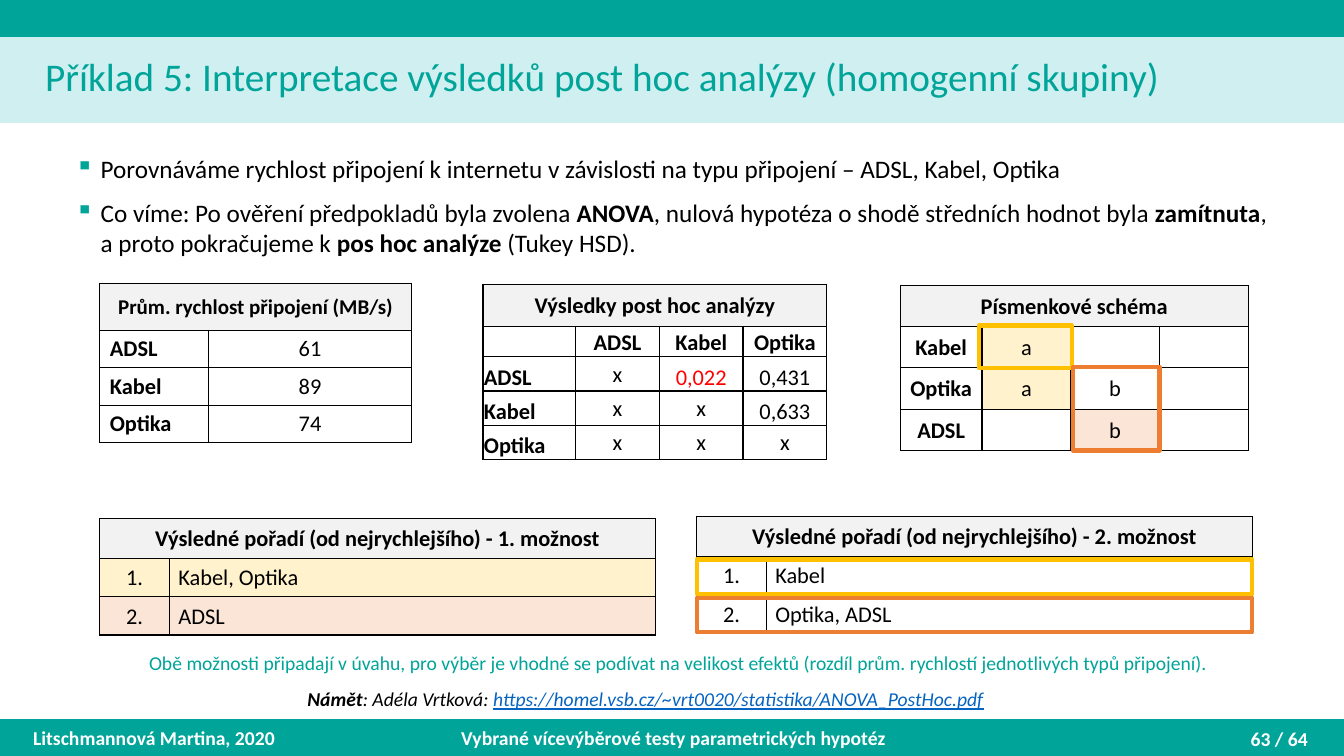
from dataclasses import dataclass

from lxml import etree
from pptx import Presentation
from pptx.dml.color import RGBColor
from pptx.enum.shapes import MSO_SHAPE
from pptx.enum.text import MSO_ANCHOR, PP_ALIGN
from pptx.oxml.ns import qn
from pptx.util import Inches, Pt

RECTANGLE = MSO_SHAPE.RECTANGLE
TOP, MIDDLE, BOTTOM = MSO_ANCHOR.TOP, MSO_ANCHOR.MIDDLE, MSO_ANCHOR.BOTTOM
LEFT, CENTER, RIGHT = PP_ALIGN.LEFT, PP_ALIGN.CENTER, PP_ALIGN.RIGHT

TEAL = RGBColor(0x00, 0xA4, 0x99)
PALE_TEAL = RGBColor(0xD0, 0xEF, 0xF0)
WHITE = RGBColor(0xFF, 0xFF, 0xFF)
BLACK = RGBColor(0x00, 0x00, 0x00)
RED = RGBColor(0xFF, 0x00, 0x00)
GREY = RGBColor(0xF2, 0xF2, 0xF2)
CREAM = RGBColor(0xFF, 0xF2, 0xCC)
PEACH = RGBColor(0xFB, 0xE5, 0xD6)
GOLD = RGBColor(0xFF, 0xC0, 0x00)
ORANGE = RGBColor(0xED, 0x7D, 0x31)
LINK_BLUE = RGBColor(0x05, 0x63, 0xC1)

TIGHT = (0.01, 0.01, 0.01, 0)
ROOMY = (0.1, 0.05, 0.1, 0.05)


@dataclass
class Run:
    text: str
    bold: bool = False
    italic: bool = False
    underline: bool = False
    color: RGBColor = None


@dataclass
class Cell:
    text: str = ""
    bold: bool = False
    align: PP_ALIGN = CENTER
    anchor: MSO_ANCHOR = MIDDLE
    fill: RGBColor = None
    color: RGBColor = BLACK
    indent: float = 0
    size: float = 16


class SlideBuilder:
    font_name = "Calibri"

    def __init__(self, slide):
        self.shapes = slide.shapes

    def rectangle(self, left, top, width, height, line, weight, fill=None):
        box = self.shapes.add_shape(RECTANGLE, Inches(left), Inches(top), Inches(width), Inches(height))
        box.shadow.inherit = False
        if fill is None:
            box.fill.background()
        else:
            box.fill.solid()
            box.fill.fore_color.rgb = fill
        box.line.color.rgb = line
        box.line.width = Pt(weight)

    def append_run(self, paragraph, run, size, color):
        piece = paragraph.add_run()
        piece.text = run.text
        font = piece.font
        font.name, font.size = self.font_name, Pt(size)
        font.bold, font.italic, font.underline = run.bold, run.italic, run.underline
        font.color.rgb = run.color or color

    def text(self, left, top, width, height, runs, size, color, align=LEFT, anchor=TOP,
             wrap=True, line_spacing=None):
        frame = self.shapes.add_textbox(Inches(left), Inches(top), Inches(width), Inches(height)).text_frame
        frame.word_wrap = wrap
        frame.vertical_anchor = anchor
        paragraph = frame.paragraphs[0]
        paragraph.alignment = align
        if line_spacing:
            paragraph.line_spacing = line_spacing
        for run in runs:
            self.append_run(paragraph, run, size, color)

    def bullets(self, left, top, width, height, items, size):
        frame = self.shapes.add_textbox(Inches(left), Inches(top), Inches(width), Inches(height)).text_frame
        frame.word_wrap = True
        for number, lines in enumerate(items):
            paragraph = frame.add_paragraph() if number else frame.paragraphs[0]
            properties = paragraph._p.get_or_add_pPr()
            properties.set("marL", str(Inches(0.25)))
            properties.set("indent", str(-Inches(0.25)))
            bullet_color = etree.SubElement(properties, qn("a:buClr"))
            etree.SubElement(bullet_color, qn("a:srgbClr"), val=str(TEAL))
            etree.SubElement(properties, qn("a:buChar"), char="▪")
            if number:
                paragraph.space_before = Pt(10)
            for line_number, line in enumerate(lines):
                if line_number:
                    paragraph.add_line_break()
                for run in line:
                    self.append_run(paragraph, run, size, BLACK)

    def border(self, cell):
        properties = cell._tc.get_or_add_tcPr()
        for position, side in enumerate(("lnL", "lnR", "lnT", "lnB")):
            line = etree.Element(qn(f"a:{side}"), w=str(Pt(1)))
            fill = etree.SubElement(line, qn("a:solidFill"))
            etree.SubElement(fill, qn("a:srgbClr"), val=str(BLACK))
            properties.insert(position, line)

    def fill_cell(self, target, cell, margins):
        if cell.fill is None:
            target.fill.background()
        else:
            target.fill.solid()
            target.fill.fore_color.rgb = cell.fill
        self.border(target)
        target.margin_left, target.margin_top, target.margin_right, target.margin_bottom = map(Inches, margins)
        target.vertical_anchor = cell.anchor
        paragraph = target.text_frame.paragraphs[0]
        paragraph.alignment = cell.align
        if cell.indent:
            paragraph._p.get_or_add_pPr().set("marL", str(Inches(cell.indent)))
        if cell.text:
            self.append_run(paragraph, Run(cell.text, cell.bold), cell.size, cell.color)
        else:
            etree.SubElement(paragraph._p, qn("a:endParaRPr"), sz=str(cell.size * 100))

    def table(self, left, top, widths, heights, heading, rows, margins=TIGHT, heading_size=16):
        table = self.shapes.add_table(len(heights), len(widths), Inches(left), Inches(top),
                                      Inches(sum(widths)), Inches(sum(heights))).table
        table.first_row = table.horz_banding = False
        for column, width in zip(table.columns, widths):
            column.width = Inches(width)
        for row, height in zip(table.rows, heights):
            row.height = Inches(height)
        head = [Cell(heading, True, fill=GREY, size=heading_size)]
        head += [Cell(fill=GREY) for _ in widths[1:]]
        for row_number, row in enumerate([head] + rows):
            for column_number, cell in enumerate(row):
                self.fill_cell(table.cell(row_number, column_number), cell, margins)
        table.cell(0, 0).merge(table.cell(0, len(widths) - 1))


def ranking_rows(names, fills):
    return [[Cell(f"{place}.", fill=fill), Cell(name, align=LEFT, indent=0.08, fill=fill)]
            for place, (name, fill) in enumerate(zip(names, fills), 1)]


def main():
    presentation = Presentation()
    presentation.slide_width, presentation.slide_height = Inches(13.33), Inches(7.5)
    page = SlideBuilder(presentation.slides.add_slide(presentation.slide_layouts[6]))

    page.rectangle(0, 7.14, 13.33, 0.36, TEAL, 1, TEAL)
    page.rectangle(0, 0.36, 13.33, 0.86, PALE_TEAL, 0.75, PALE_TEAL)
    page.rectangle(0, 0, 13.33, 0.36, TEAL, 1, TEAL)
    page.text(0.35, 0.4, 11.88, 0.81,
              [Run("Příklad 5: Interpretace výsledků post hoc analýzy (homogenní skupiny)")],
              28, TEAL, anchor=MIDDLE, line_spacing=0.7)
    for left, top, width, label, align in (
            (0.23, 7.14, 3, "Litschmannová Martina, 2020", LEFT),
            (4.43, 7.14, 4.5, "Vybrané vícevýběrové testy parametrických hypotéz", CENTER),
            (10.07, 7.15, 3, "63 / 64", RIGHT)):
        page.text(left, top, width, 0.36, [Run(label, True)], 14, WHITE, align, MIDDLE)

    page.bullets(0.65, 1.47, 12.29, 1.2, [
        [[Run("Porovnáváme rychlost připojení k internetu v závislosti na typu připojení – ADSL, Kabel, Optika")]],
        [[Run("Co víme: Po ověření předpokladů byla zvolena "), Run("ANOVA", True),
          Run(", nulová hypotéza o shodě středních hodnot byla "), Run("zamítnuta", True), Run(",")],
         [Run("a proto pokračujeme k "), Run("pos hoc analýze ", True), Run("(Tukey HSD).")]],
    ], 18)

    speeds = (("ADSL", "61"), ("Kabel", "89"), ("Optika", "74"))
    page.table(0.99, 2.81, [1.08, 2.01], [0.47] + [0.37] * 3, "Prům. rychlost připojení (MB/s)",
               [[Cell(name, True, LEFT, TOP, WHITE), Cell(speed, anchor=TOP, fill=WHITE)]
                for name, speed in speeds], ROOMY, 15)

    p_values = (("ADSL", "x", "0,022", "0,431"), ("Kabel", "x", "x", "0,633"), ("Optika", "x", "x", "x"))
    post_hoc = [[Cell()] + [Cell(name, True, anchor=BOTTOM) for name, *_ in p_values]]
    for name, *values in p_values:
        post_hoc.append([Cell(name, True, LEFT, BOTTOM)] + [
            Cell(value, anchor=MIDDLE if value == "x" else BOTTOM, color=RED if value == "0,022" else BLACK)
            for value in values])
    page.table(4.79, 2.82, [0.92] + [0.83] * 3, [0.42, 0.3] + [0.34] * 3, "Výsledky post hoc analýzy", post_hoc)

    letter_rows = [
        [Cell("Kabel", True), Cell("a", fill=CREAM), Cell(), Cell()],
        [Cell("Optika", True), Cell("a", fill=CREAM), Cell("b"), Cell()],
        [Cell("ADSL", True), Cell(), Cell("b", fill=PEACH), Cell()],
    ]
    page.table(8.93, 2.83, [0.81] + [0.88] * 3, [0.41] * 4, "Písmenkové schéma", letter_rows)

    for option, left, top, names, fills in (
            (1, 0.99, 5.14, ("Kabel, Optika", "ADSL"), (CREAM, PEACH)),
            (2, 6.91, 5.12, ("Kabel", "Optika, ADSL"), (None, None))):
        page.table(left, top, [0.69, 4.82], [0.4, 0.38, 0.38],
                   f"Výsledné pořadí (od nejrychlejšího) - {option}. možnost", ranking_rows(names, fills))

    for left, top, width, height, color in (
            (9.71, 3.23, 0.92, 0.42, GOLD), (10.64, 3.64, 0.86, 0.83, ORANGE),
            (6.91, 5.93, 5.51, 0.34, ORANGE), (6.91, 5.55, 5.51, 0.34, GOLD)):
        page.rectangle(left, top, width, height, color, 3)

    page.text(1.38, 6.41, 11, 0.34, [
        Run("Obě možnosti připadají v úvahu, pro výběr je vhodné se podívat na velikost efektů "
            "(rozdíl prům. rychlostí jednotlivých typů připojení).")], 14, TEAL, wrap=False)
    page.text(2.95, 6.77, 6.92, 0.34, [
        Run("Námět", True, True), Run(": Adéla Vrtková: ", italic=True),
        Run("https://homel.vsb.cz/~vrt0020/statistika/ANOVA_PostHoc.pdf", False, True, True, LINK_BLUE),
    ], 14, BLACK, wrap=False)

    presentation.save("out.pptx")


if __name__ == "__main__":
    main()
